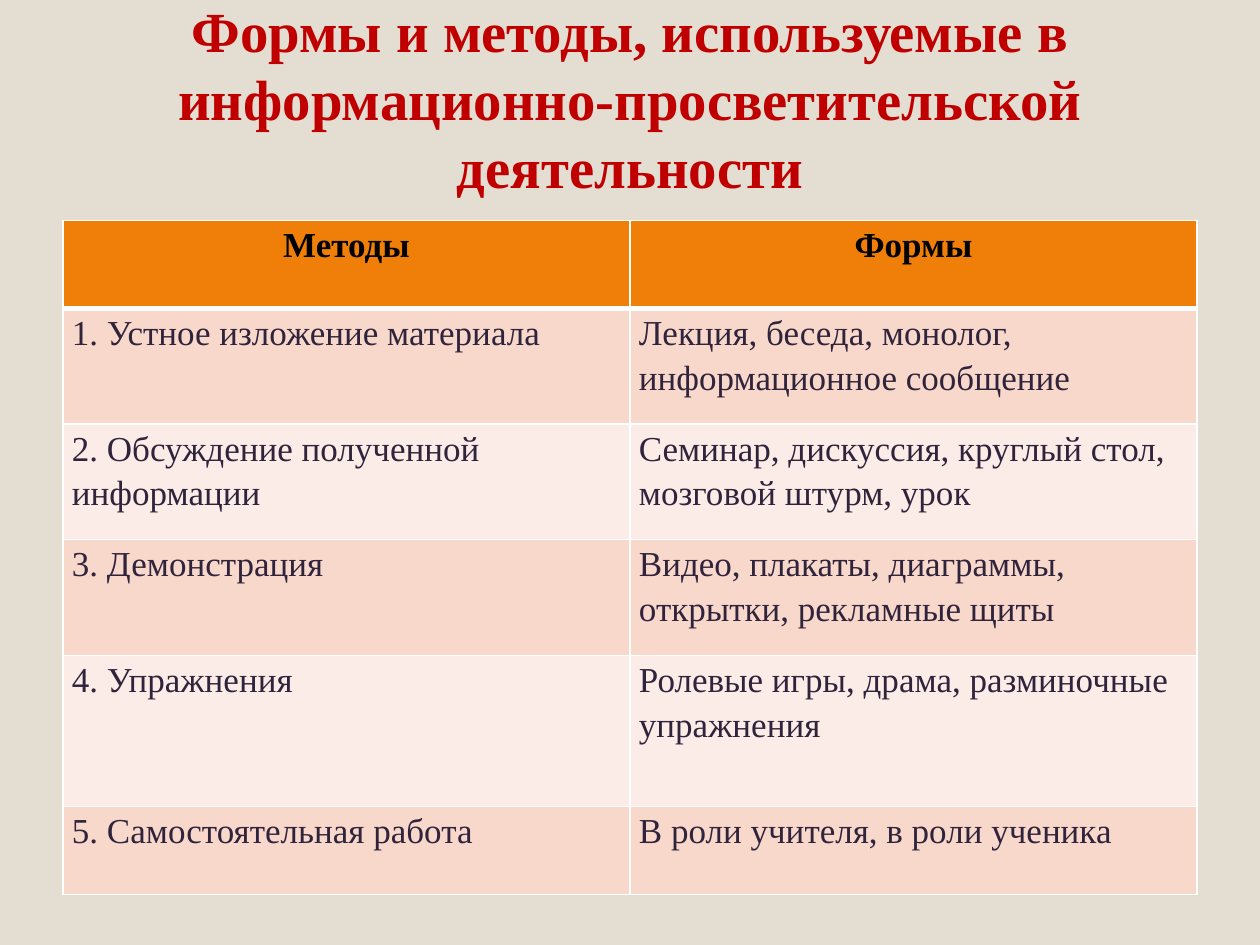
from lxml import etree
from pptx import Presentation
from pptx.dml.color import RGBColor
from pptx.enum.text import MSO_ANCHOR, PP_ALIGN
from pptx.oxml.ns import qn
from pptx.util import Cm, Pt

TITLE = "Формы и методы, используемые в информационно-просветительской деятельности"
HEADERS = ("Методы", "Формы")
METHODS = [
    ("1. Устное изложение материала", "Лекция, беседа, монолог, информационное сообщение"),
    ("2. Обсуждение полученной информации", "Семинар, дискуссия, круглый стол, мозговой штурм, урок"),
    ("3. Демонстрация", "Видео, плакаты, диаграммы, открытки, рекламные щиты"),
    ("4. Упражнения", "Ролевые игры, драма, разминочные упражнения"),
    ("5. Самостоятельная работа", "В роли учителя, в роли ученика"),
]
ROW_HEIGHTS = (1.77, 2.33, 2.33, 2.33, 3.05, 1.77)

FONT = "Times New Roman"
BACKGROUND = RGBColor(0xE3, 0xDE, 0xD1)
RED = RGBColor(0xC0, 0x00, 0x00)
BLACK = RGBColor(0x00, 0x00, 0x00)
INK = RGBColor(0x30, 0x24, 0x3C)
ORANGE = RGBColor(0xF0, 0x7F, 0x09)
BANDS = (RGBColor(0xF9, 0xD8, 0xCC), RGBColor(0xFC, 0xEC, 0xE7))
WHITE = RGBColor(0xFF, 0xFF, 0xFF)
CENTER, LEFT = PP_ALIGN.CENTER, PP_ALIGN.LEFT
MIDDLE = MSO_ANCHOR.MIDDLE

MARGIN, WIDTH, TABLE_TOP = 1.27, 22.86, 4.45


def write(para, text, size, color, bold, align):
    para.alignment = align
    span = para.add_run()
    span.text = text
    span.font.name = FONT
    span.font.size = Pt(size)
    span.font.bold = bold
    span.font.color.rgb = color


def add_borders(cell, widths):
    properties = cell._tc.get_or_add_tcPr()
    for index, (side, width) in enumerate(widths.items()):
        line = etree.Element(qn(f"a:ln{side}"), w=str(Pt(width)))
        fill = etree.SubElement(line, qn("a:solidFill"))
        etree.SubElement(fill, qn("a:srgbClr"), val=str(WHITE))
        properties.insert(index, line)


def add_title(page):
    box = page.shapes.add_textbox(Cm(MARGIN), Cm(0), Cm(WIDTH), Cm(3.94))
    frame = box.text_frame
    frame.word_wrap = True
    frame.vertical_anchor = MIDDLE
    write(frame.paragraphs[0], TITLE, 32.4, RED, True, CENTER)


def add_methods_table(page):
    rows = [HEADERS, *METHODS]
    table = page.shapes.add_table(
        len(rows), len(HEADERS), Cm(MARGIN), Cm(TABLE_TOP), Cm(WIDTH), Cm(sum(ROW_HEIGHTS))
    ).table
    for column in table.columns:
        column.width = Cm(WIDTH / len(HEADERS))
    for number, (texts, height) in enumerate(zip(rows, ROW_HEIGHTS)):
        table.rows[number].height = Cm(height)
        header = number == 0
        for column, text in enumerate(texts):
            cell = table.cell(number, column)
            cell.margin_left = cell.margin_right = Cm(0.18)
            cell.margin_top = cell.margin_bottom = Cm(0)
            cell.fill.solid()
            cell.fill.fore_color.rgb = ORANGE if header else BANDS[(number - 1) % 2]
            para = cell.text_frame.paragraphs[0]
            para.line_spacing = 1.15
            para.space_after = Pt(10)
            write(para, text, 20, BLACK if header else INK, header, CENTER if header else LEFT)
            add_borders(cell, {"L": 1, "R": 1, "T": 3 if number == 1 else 1, "B": 3 if header else 1})


def main():
    deck = Presentation()
    deck.slide_width, deck.slide_height = Cm(25.4), Cm(19.05)
    page = deck.slides.add_slide(deck.slide_layouts[6])
    page.background.fill.solid()
    page.background.fill.fore_color.rgb = BACKGROUND
    add_title(page)
    add_methods_table(page)
    deck.save("out.pptx")


if __name__ == "__main__":
    main()
